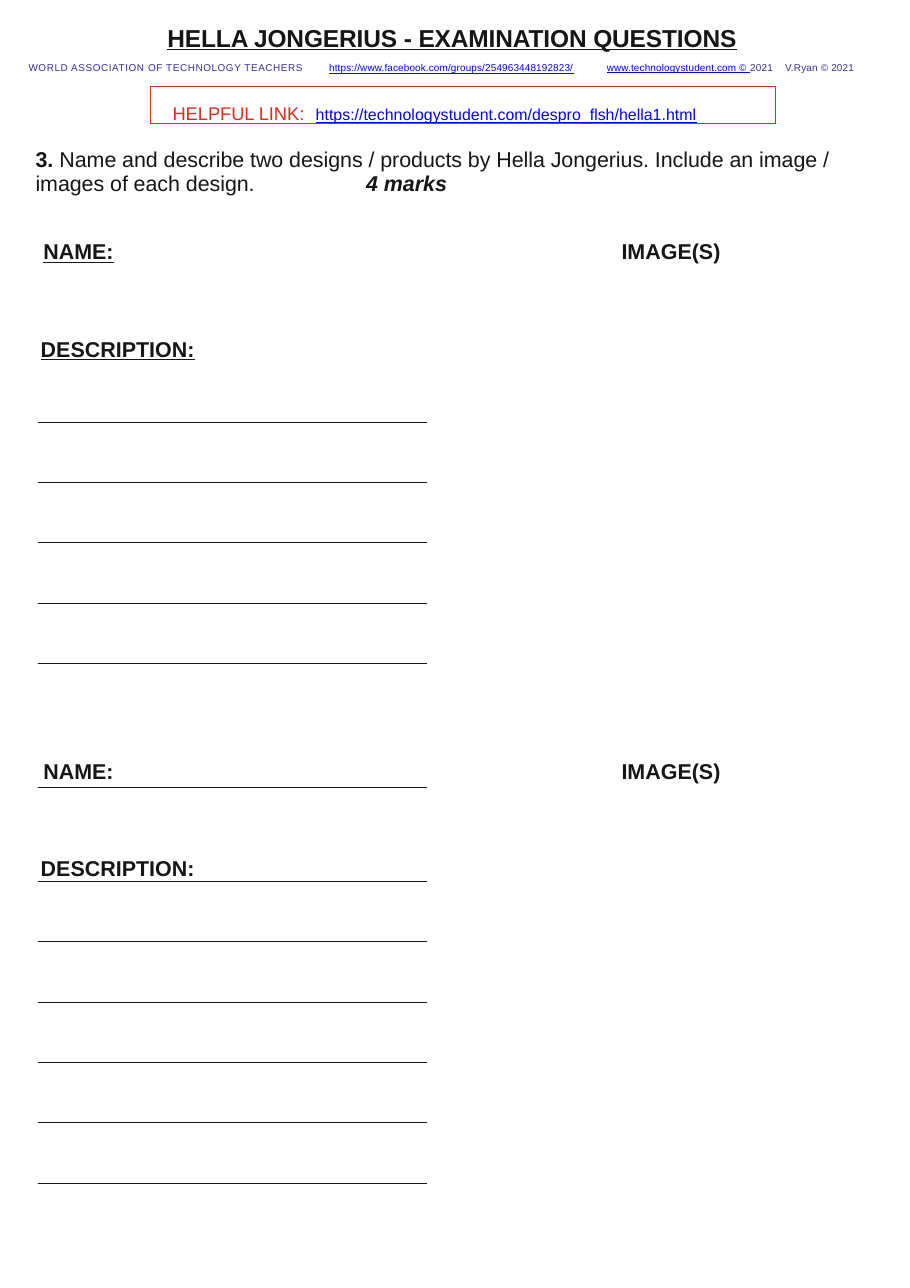
from lxml import etree
from pptx import Presentation
from pptx.dml.color import RGBColor
from pptx.enum import shapes, text
from pptx.oxml.ns import qn
from pptx.util import Cm, Pt

INK, RED, BLUE, VIOLET = "151616", "DD2B1C", "0000FF", "3C2B98"
MARGIN = 0.87
RULE_WIDTH = 8.97
RULE_PITCH = 1.39


def colour(value):
    """Turn a hex string into a colour."""
    return RGBColor.from_string(value)


def fill_text(box, spans, size, ink=INK, bold=False, inset_top=0.06, inset_left=0.03, tab=None):
    """Write one paragraph of (words, style) spans into a box."""
    frame = box.text_frame
    frame.word_wrap = True
    frame.auto_size = text.MSO_AUTO_SIZE.NONE
    frame.vertical_anchor = text.MSO_ANCHOR.TOP
    frame.margin_left, frame.margin_top = Cm(inset_left), Cm(inset_top)
    frame.margin_right = frame.margin_bottom = 0
    para = frame.paragraphs[0]
    para.alignment = text.PP_ALIGN.LEFT
    if tab:
        stops = etree.SubElement(para._p.get_or_add_pPr(), qn("a:tabLst"))
        etree.SubElement(stops, qn("a:tab"), pos=str(Cm(tab)), algn="l")
    para.font.name, para.font.size = "Arial", Pt(size)
    para.font.bold = bold
    para.font.color.rgb = colour(ink)
    for words, style in spans:
        span = para.add_run()
        span.text = words
        for name, value in style.items():
            if name == "ink":
                span.font.color.rgb = colour(value)
            elif name in ("spc", "baseline"):
                span.font._element.set(name, str(value))
            else:
                setattr(span.font, name, value)
    return para


def add_text(page, left, top, width, height, spans, size, **layout):
    """Add a text box with one paragraph."""
    box = page.shapes.add_textbox(Cm(left), Cm(top), Cm(width), Cm(height))
    return fill_text(box, spans, size, **layout)


def add_rule(page, left, top, width):
    """Draw a horizontal writing line."""
    rule = page.shapes.add_connector(
        shapes.MSO_CONNECTOR.STRAIGHT, Cm(left), Cm(top), Cm(left + width), Cm(top))
    rule.line.color.rgb = colour(INK)
    rule.line.width = Pt(0.57)
    etree.SubElement(rule._element.spPr, qn("a:effectLst"))


def add_header(page, left, top):
    """Place the title and the line of credits under it."""
    title = page.shapes.title
    title.left, title.top = Cm(left + 3.2), Cm(top)
    title.width, title.height = Cm(13.31), Cm(0.74)
    fill_text(title, [("HELLA JONGERIUS - EXAMINATION QUESTIONS",
                       {"underline": True, "spc": -5})], 16, bold=True)
    link = {"ink": BLUE, "underline": True, "spc": 10}
    add_text(page, left, top + 0.91, 12.75, 0.36,
             [("WORLD ASSOCIATION OF TECHNOLOGY TEACHERS\t", {"spc": 40}),
              ("https://www.facebook.com/groups/254963448192823/", link)],
             6.5, ink=VIOLET, tab=6.93)
    add_text(page, left + 13.33, top + 0.89, 5.89, 0.36,
             [("www.technologystudent.com © ", link),
              ("2021\tV.Ryan © 2021", {"spc": 15})],
             6.5, ink=VIOLET, tab=4.11)


def add_help_link(page, left, top, width, height):
    """Frame the helpful link in red."""
    box = page.shapes.add_shape(
        shapes.MSO_SHAPE.RECTANGLE, Cm(left), Cm(top), Cm(width), Cm(height))
    box.shadow.inherit = False
    box.fill.background()
    box.line.color.rgb = colour(RED)
    box.line.width = Pt(0.57)
    fill_text(box, [("HELPFUL LINK:\t", {"spc": -5}),
                    ("https://technologystudent.com/despro_ﬂsh/hella1.html",
                     {"ink": BLUE, "underline": True, "size": Pt(18), "baseline": 2000})],
              12, ink=RED, inset_top=0.15, inset_left=0.5, tab=3.3)


def add_question(page, left, top, width, height):
    """Write the question and its marks."""
    para = add_text(page, left, top, width, height,
                    [("3. ", {"bold": True}),
                     ("Name and describe two designs / products by Hella Jongerius. "
                      "Include an image / images of each design.\t", {"spc": -5}),
                     ("4 marks", {"bold": True, "italic": True})],
                    14, inset_top=0.08, tab=7.62)
    para.line_spacing = Pt(15.6)


def add_answer(page, left, top, first_rule, rule_count, underline):
    """Lay out the headings and writing lines for one design."""
    style = {"underline": underline}
    headings = [("NAME:", 0.1, 0, 8.9, style),
                ("DESCRIPTION:", 0.04, 2.24, 8.9, style),
                ("IMAGE(S)", 13.43, 0, 2.6, {})]
    for words, across, down, width, look in headings:
        add_text(page, left + across, top + down, width, 0.66,
                 [(words, look)], 14, bold=True)
    for index in range(rule_count):
        add_rule(page, left, top + first_rule + index * RULE_PITCH, RULE_WIDTH)


def main():
    """Build the question sheet."""
    deck = Presentation()
    deck.slide_width, deck.slide_height = Cm(20.98), Cm(29.69)
    page = deck.slides.add_slide(deck.slide_layouts[5])
    add_header(page, 0.63, 0.46)
    add_help_link(page, 3.48, 2, 14.4, 0.84)
    add_question(page, 0.79, 3.33, 19.43, 1.22)
    add_answer(page, MARGIN, 5.44, 4.29, 5, True)
    add_answer(page, MARGIN, 17.42, 2.9, 6, False)
    add_rule(page, MARGIN, 18.14, RULE_WIDTH)
    deck.save("out.pptx")


if __name__ == "__main__":
    main()
